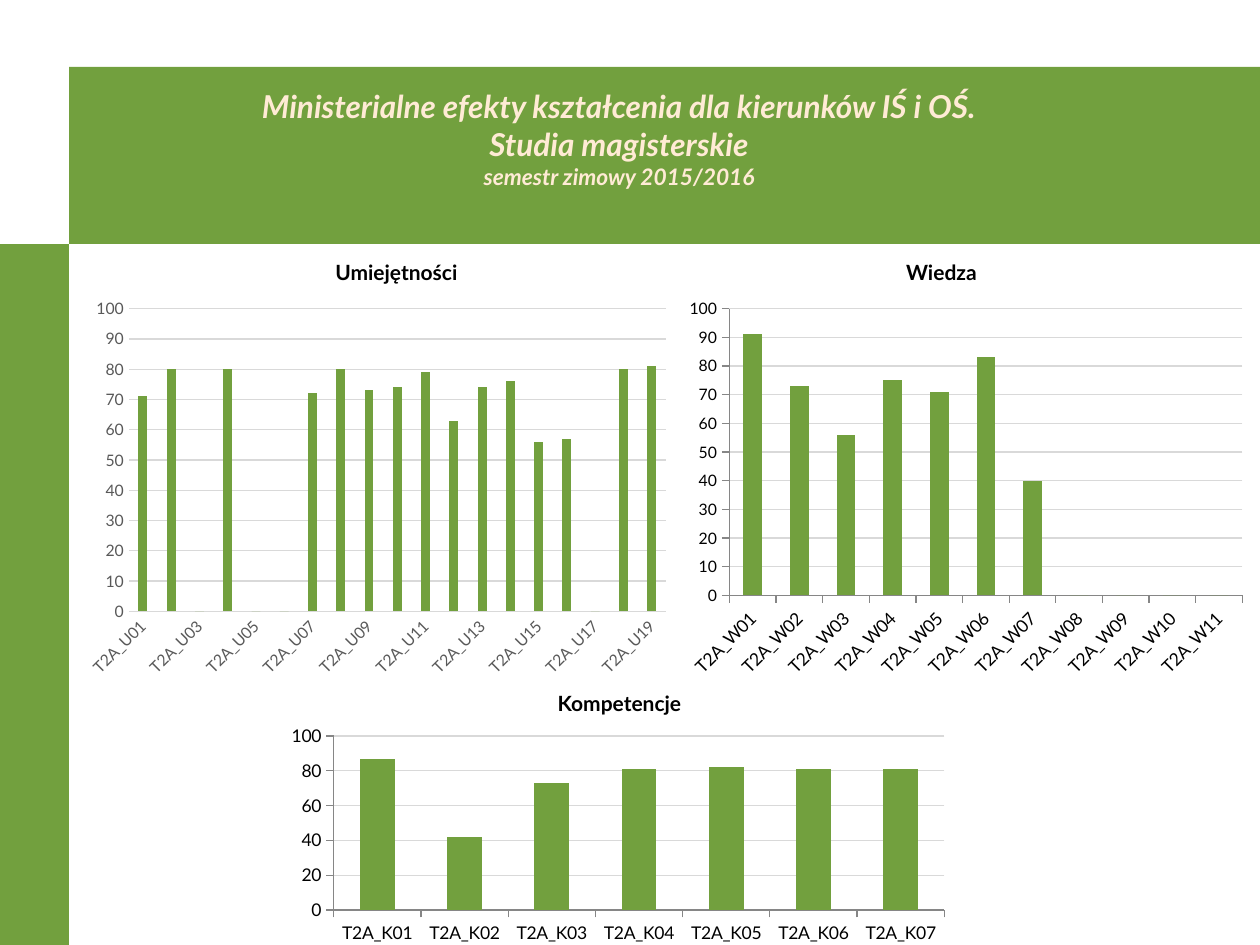
"""Build the slide of ministerial learning outcomes with three column charts."""
from pptx import Presentation
from pptx.chart.data import CategoryChartData
from pptx.dml.color import RGBColor
from pptx.enum.chart import XL_CHART_TYPE, XL_TICK_MARK
from pptx.enum.shapes import MSO_SHAPE
from pptx.enum.text import MSO_AUTO_SIZE, PP_ALIGN
from pptx.util import Pt

PX = 914400 / 126
GREEN = "72A03E"
GRID = "D9D9D9"


def paint(target, color):
    target.solid()
    target.fore_color.rgb = RGBColor.from_string(color)


def add_text(slide, box, lines, color, italic=False):
    frame = slide.shapes.add_textbox(*[round(v * PX) for v in box]).text_frame
    frame.word_wrap = True
    frame.auto_size = MSO_AUTO_SIZE.SHAPE_TO_FIT_TEXT
    for index, (text, size) in enumerate(lines):
        paragraph = frame.add_paragraph() if index else frame.paragraphs[0]
        paragraph.alignment = PP_ALIGN.CENTER
        run = paragraph.add_run()
        run.text = text
        run.font.name = "Lato"
        run.font.size = Pt(size)
        run.font.bold = True
        run.font.italic = italic
        paint(run.font.fill, color)


prs = Presentation()
prs.slide_width = round(1260 * PX)
prs.slide_height = round(945 * PX)
slide = prs.slides.add_slide(prs.slide_layouts[6])

for bounds in [(69, 67, 1191, 177), (0, 244, 69, 701), (822, 68, 28, 175)]:
    band = slide.shapes.add_shape(MSO_SHAPE.RECTANGLE, *[round(v * PX) for v in bounds])
    band.shadow.inherit = False
    band.line.fill.background()
    paint(band.fill, GREEN)

add_text(slide, (190, 81, 858, 117), [
    ("Ministerialne efekty kształcenia dla kierunków IŚ i OŚ.", 18),
    ("Studia magisterskie", 18),
    ("semestr zimowy 2015/2016", 13),
], "FFEBD5", italic=True)

outcomes = [
    dict(heading="Umiejętności", heading_at=(100, 253), plot=(77, 291, 601, 394), code="U",
         scores=[71, 80, 0, 80, 0, 0, 72, 80, 73, 74, 79, 63, 74, 76, 56, 57, 0, 80, 81],
         gap=219, overlap=-27, step=10, sizes=(9, 9), ink="595959", ticks=False, slanted=True),
    dict(heading="Wiedza", heading_at=(645, 253), plot=(678, 291, 576, 394), code="W",
         scores=[91, 73, 56, 75, 71, 83, 40, 0, 0, 0, 0],
         gap=150, overlap=0, step=10, sizes=(10, 9), ink="000000", ticks=True, slanted=True),
    dict(heading="Kompetencje", heading_at=(323, 684), plot=(278, 721, 680, 227), code="K",
         scores=[87, 42, 73, 81, 82, 81, 81],
         gap=150, overlap=0, step=20, sizes=(10, 10), ink="000000", ticks=True, slanted=False),
]

for outcome in outcomes:
    data = CategoryChartData(number_format="0")
    data.categories = [f"T2A_{outcome['code']}{n:02}" for n in range(1, len(outcome["scores"]) + 1)]
    data.add_series("Series 1", outcome["scores"])
    chart = slide.shapes.add_chart(
        XL_CHART_TYPE.COLUMN_CLUSTERED, *[round(v * PX) for v in outcome["plot"]], data).chart
    chart.has_legend = False
    chart.has_title = False
    chart.font.name = "Lato"
    chart.font.size = Pt(10)
    paint(chart.font.fill, "000000")

    columns = chart.plots[0]
    columns.vary_by_categories = False
    columns.gap_width = outcome["gap"]
    columns.overlap = outcome["overlap"]
    paint(columns.series[0].format.fill, GREEN)

    for axis, size in zip((chart.category_axis, chart.value_axis), outcome["sizes"]):
        axis.major_tick_mark = XL_TICK_MARK.OUTSIDE if outcome["ticks"] else XL_TICK_MARK.NONE
        axis.minor_tick_mark = XL_TICK_MARK.NONE
        axis.tick_labels.font.name = "Lato"
        axis.tick_labels.font.size = Pt(size)
        paint(axis.tick_labels.font.fill, outcome["ink"])
        axis.format.line.width = Pt(0.75)
        paint(axis.format.line.fill, "868686" if outcome["ticks"] else GRID)

    scale = chart.value_axis
    scale.minimum_scale = 0
    scale.maximum_scale = 100
    scale.major_unit = outcome["step"]
    scale.tick_labels.number_format = "0"
    scale.tick_labels.number_format_is_linked = False
    scale.major_gridlines.format.line.width = Pt(0.75)
    paint(scale.major_gridlines.format.line.fill, GRID)
    if not outcome["ticks"]:
        scale.format.line.fill.background()
    if outcome["slanted"]:
        chart.category_axis._element.xpath("c:txPr/a:bodyPr")[0].set("rot", "-2700000")

    add_text(slide, (*outcome["heading_at"], 593, 38), [(outcome["heading"], 12)], "000000")

prs.save("out.pptx")
